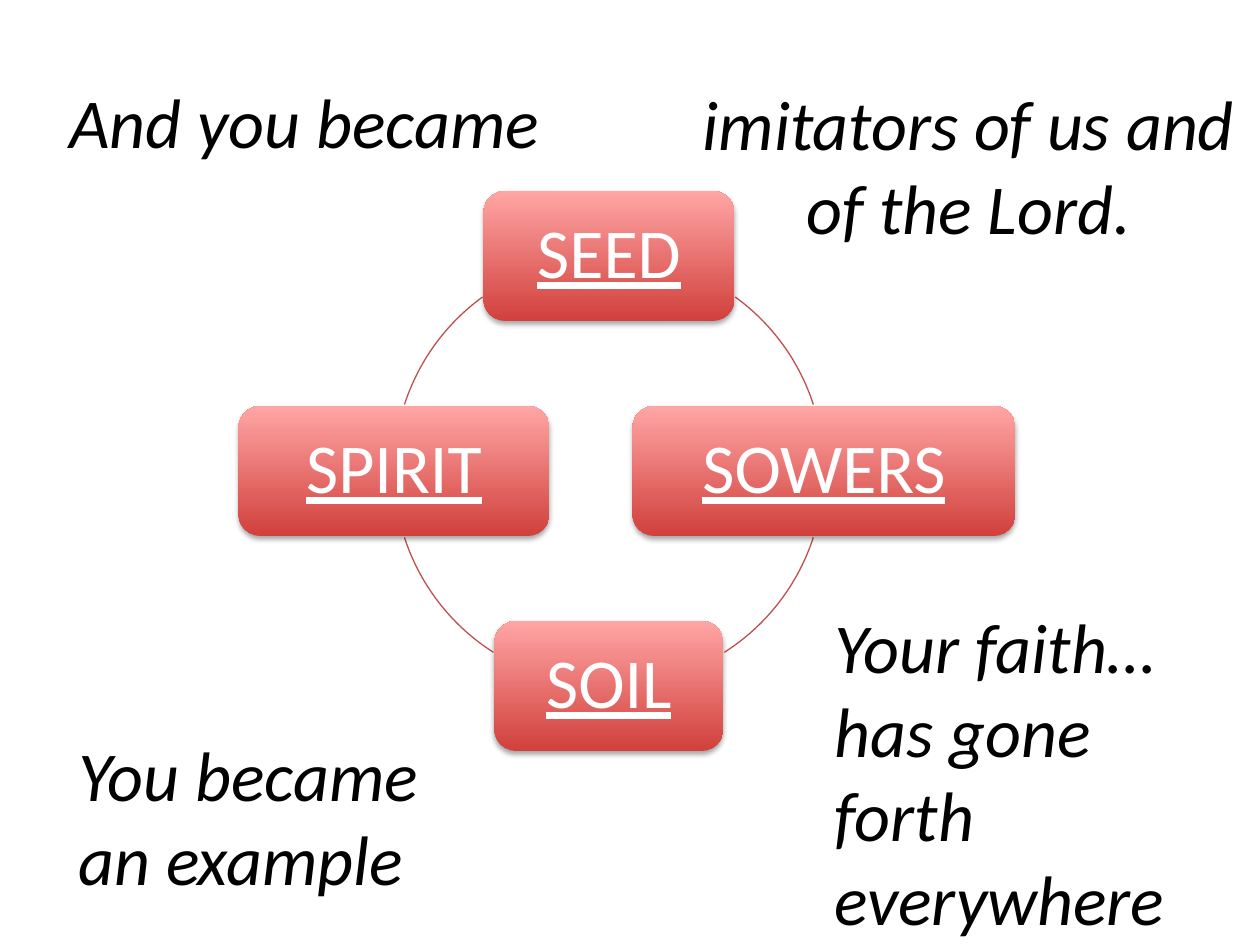
from lxml import etree
from pptx import Presentation
from pptx import util as u
from pptx.dml.color import RGBColor
from pptx.enum import shapes, text
from pptx.oxml.ns import qn

PIXEL = 914400 // 126
CENTER_X, CENTER_Y, RADIUS = 609, 471, 215
BOX_HEIGHT = 130

# word, width, direction from the centre of the cycle
STEPS = [
    ("SEED", 251, (0, -1)),
    ("SOWERS", 383, (1, 0)),
    ("SOIL", 229, (0, 1)),
    ("SPIRIT", 311, (-1, 0)),
]
# start and end in degrees, clockwise from the right
ARCS = [(306, 342), (18, 57.5), (122.5, 162), (198, 234)]
# words, left, top, width, height, alignment
QUOTES = [
    ("And you became", 57, 72, 520, 97, "LEFT"),
    ("imitators of us and of the Lord.", 668, 74, 601, 183, "CENTER"),
    ("You became an example", 66, 725, 422, 183, "LEFT"),
    ("Your faith…has gone forth everywhere", 822, 597, 422, 352, "LEFT"),
]


def color(value):
    """Turn a hex string into a colour."""
    return RGBColor.from_string(value)


def place(*pixels):
    """Turn pixel lengths into EMU."""
    return [u.Emu(round(pixel * PIXEL)) for pixel in pixels]


def set_all(target, **values):
    """Set each attribute of the target from the given values."""
    for name, value in values.items():
        setattr(target, name, value)


def write(shape, words, align, ink, **font):
    """Write one paragraph of 40 point text and return it."""
    para = shape.text_frame.paragraphs[0]
    para.alignment = getattr(text.PP_ALIGN, align)
    span = para.add_run()
    span.text = words
    set_all(span.font, name="Calibri", size=u.Pt(40), **font)
    span.font.color.rgb = color(ink)
    return para


def add_shadow(shape):
    """Give the shape a soft shadow below it."""
    shape.shadow.inherit = False
    effects = shape._element.spPr.find(qn("a:effectLst"))
    shadow = etree.SubElement(effects, qn("a:outerShdw"), blurRad="39370",
                              dist="23000", dir="5400000", rotWithShape="0")
    shade = etree.SubElement(shadow, qn("a:srgbClr"), val="000000")
    etree.SubElement(shade, qn("a:alpha"), val="35000")


def add_arc(page, start, end):
    """Draw one part of the circle that links the steps."""
    arc = page.shapes.add_shape(
        shapes.MSO_SHAPE.ARC,
        *place(CENTER_X - RADIUS, CENTER_Y - RADIUS, 2 * RADIUS, 2 * RADIUS))
    for index, angle in enumerate((start, end)):
        arc.adjustments[index] = angle * 0.6
    arc.shadow.inherit = False
    arc.fill.background()
    arc.line.color.rgb = color("C0504D")
    arc.line.width = u.Pt(0.75)


def add_step(page, word, width, direction):
    """Add one rounded step box on the circle."""
    across, down = direction
    left = CENTER_X + across * RADIUS - width / 2
    top = CENTER_Y + down * RADIUS - BOX_HEIGHT / 2
    box = page.shapes.add_shape(shapes.MSO_SHAPE.ROUNDED_RECTANGLE,
                                *place(left, top, width, BOX_HEIGHT))
    box.fill.gradient()
    box.fill.gradient_angle = 90
    for stop, value in zip(box.fill.gradient_stops, ("D1403C", "FFA6A5")):
        stop.color.rgb = color(value)
    box.line.fill.background()
    add_shadow(box)
    set_all(box.text_frame, word_wrap=True,
            vertical_anchor=text.MSO_ANCHOR.MIDDLE)
    para = write(box, word, "CENTER", "FFFFFF", underline=True)
    para.line_spacing = 0.9


def add_quote(page, words, left, top, width, height, align):
    """Add one italic quotation."""
    box = page.shapes.add_textbox(*place(left, top, width, height))
    box.text_frame.word_wrap = True
    write(box, words, align, "000000", italic=True)


def main():
    """Build the slide and save it."""
    deck = Presentation()
    set_all(deck, slide_width=u.Inches(10), slide_height=u.Inches(7.5))
    page = deck.slides.add_slide(deck.slide_layouts[6])
    for arc in ARCS:
        add_arc(page, *arc)
    for step in STEPS:
        add_step(page, *step)
    for quote in QUOTES:
        add_quote(page, *quote)
    deck.save("out.pptx")


main()
